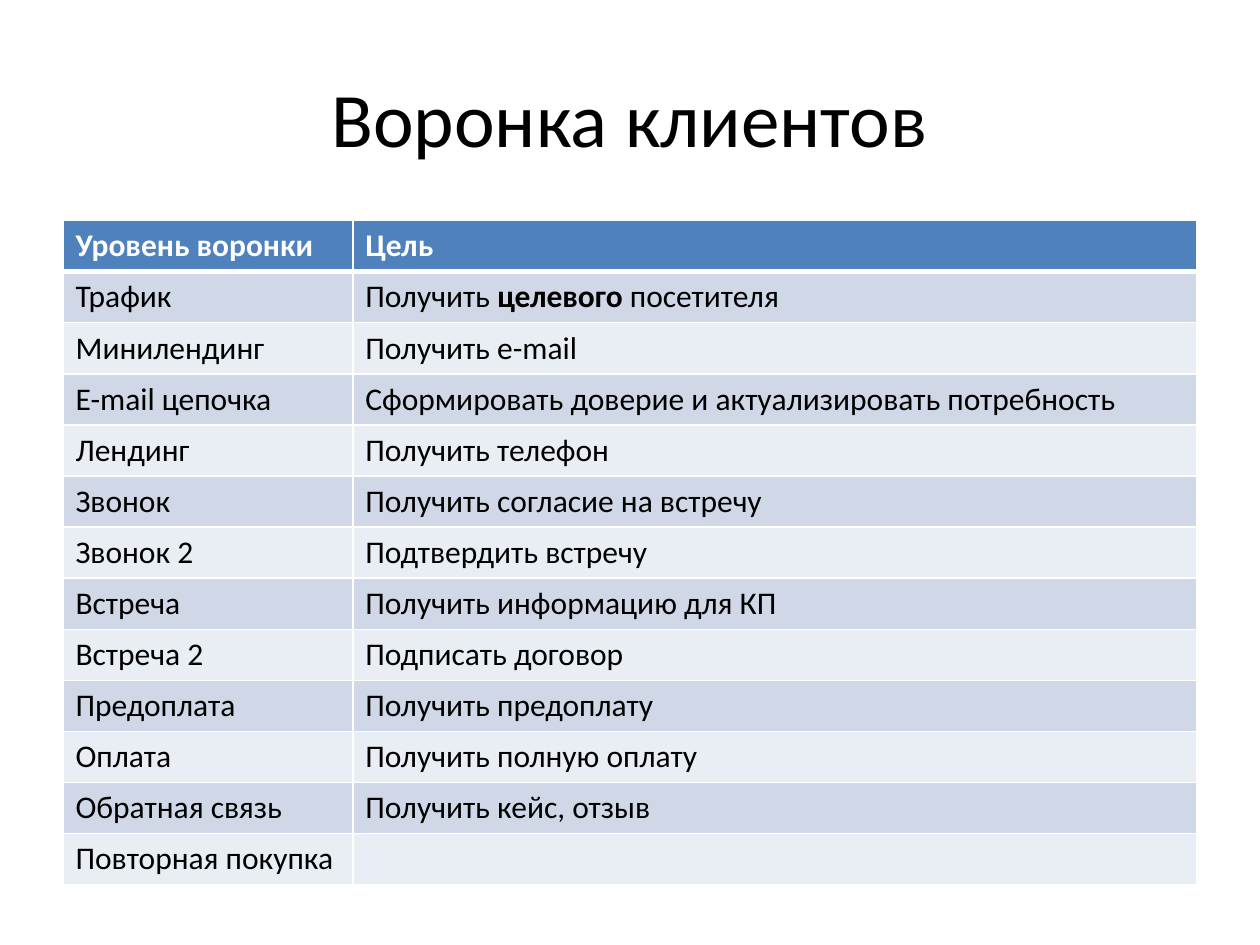
from lxml.etree import SubElement
from pptx import Presentation
from pptx.dml.color import RGBColor
from pptx.enum.text import MSO_ANCHOR, PP_ALIGN
from pptx.oxml.ns import qn
from pptx.util import Inches, Pt

HEX = {"head": "4F81BD", "odd": "D0D8E8", "even": "E9EDF4",
       "text": "000000", "white": "FFFFFF"}

# Each goal is a list of pieces; every second piece is bold
ROWS = [
    ("Уровень воронки", ["Цель"]),
    ("Трафик", ["Получить ", "целевого", " посетителя"]),
    ("Минилендинг", ["Получить e-mail"]),
    ("E-mail цепочка", ["Сформировать доверие и актуализировать потребность"]),
    ("Лендинг", ["Получить телефон"]),
    ("Звонок", ["Получить согласие на встречу"]),
    ("Звонок 2", ["Подтвердить встречу"]),
    ("Встреча", ["Получить информацию для КП"]),
    ("Встреча 2", ["Подписать договор"]),
    ("Предоплата", ["Получить предоплату"]),
    ("Оплата", ["Получить полную оплату"]),
    ("Обратная связь", ["Получить кейс, отзыв"]),
    ("Повторная покупка", []),
]


def add_run(para, text, color, **form):
    run = para.add_run()
    run.text = text
    for name, value in {"name": "Calibri", **form}.items():
        setattr(run.font, name, value)
    run.font.color.rgb = RGBColor.from_string(HEX[color])


def add_edge(cell, side, width):
    line = SubElement(cell._tc.get_or_add_tcPr(), qn("a:ln" + side), w=str(Pt(width)))
    fill = SubElement(line, qn("a:solidFill"))
    SubElement(fill, qn("a:srgbClr"), val=HEX["white"])


deck = Presentation()
deck.slide_width, deck.slide_height = Inches(10), Inches(7.5)
slide = deck.slides.add_slide(deck.slide_layouts[5])

# Title
title = slide.shapes.title
place = {"left": 0.5, "top": 0.3, "width": 9, "height": 1.25}
for name, value in place.items():
    setattr(title, name, Inches(value))
title.text_frame.vertical_anchor = MSO_ANCHOR.MIDDLE
para = title.text_frame.paragraphs[0]
para.alignment = PP_ALIGN.CENTER
add_run(para, "Воронка клиентов", "text", size=Pt(44))

# Table grid
table = slide.shapes.add_table(len(ROWS), 2, Inches(0.5), Inches(1.75),
                               Inches(9), Inches(5.27)).table
for col, width in zip(table.columns, (2.3, 6.7)):
    col.width = Inches(width)

# Cells: edges go before the fill
for i, (level, goal) in enumerate(ROWS):
    band = "head" if i == 0 else "odd" if i % 2 else "even"
    for j, parts in enumerate(([level], goal)):
        cell = table.cell(i, j)
        for side in "LRTB":
            thick = (i, side) in ((0, "B"), (1, "T"))
            add_edge(cell, side, 3 if thick else 1)
        cell.fill.solid()
        cell.fill.fore_color.rgb = RGBColor.from_string(HEX[band])
        for k, part in enumerate(parts):
            add_run(cell.text_frame.paragraphs[0], part,
                    "text" if i else "white",
                    size=Pt(18), bold=i == 0 or k % 2 == 1)

deck.save("out.pptx")
